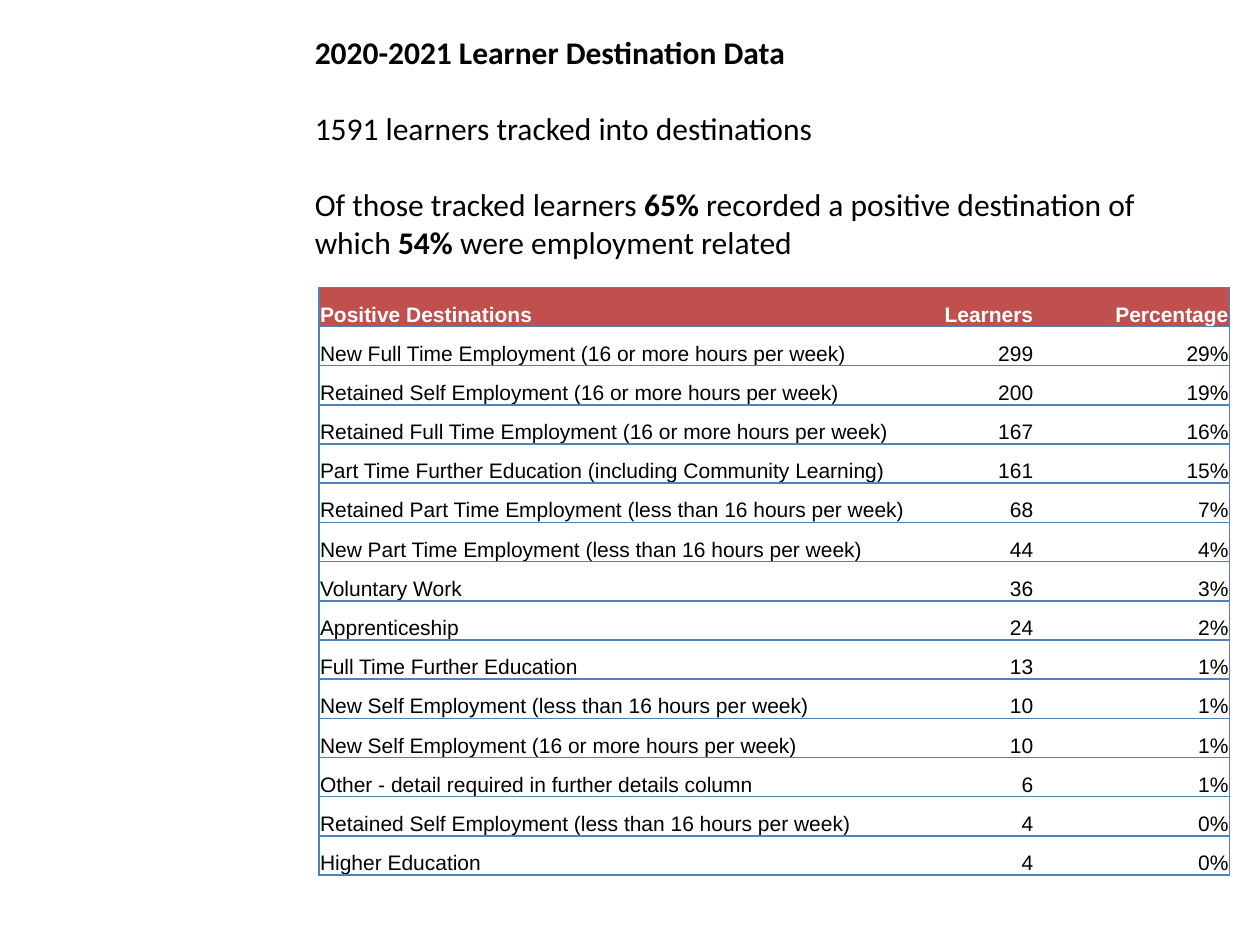
from lxml import etree
from pptx import Presentation
from pptx import util as u
from pptx.dml.color import RGBColor
from pptx.enum import text
from pptx.oxml import ns

BLACK = RGBColor(0x00, 0x00, 0x00)
WHITE = RGBColor(0xFF, 0xFF, 0xFF)
RED = RGBColor(0xC0, 0x50, 0x4D)
BLUE = RGBColor(0x4F, 0x81, 0xBD)

SLIDE_WIDTH, SLIDE_HEIGHT = u.Inches(10), u.Inches(7.5)
GRID_COLUMNS, GRID_ROWS = 1000, 750
SUMMARY_BOX = (240, 21, 736, 283)
TABLE_BOX = (253, 228, 723, 467)
TABLE_COLUMNS = (480, 88, 155)
PLAIN_STYLE = "{2D5ABB26-0587-4C30-8999-92F81FD0307C}"

SUMMARY_FONT = {"name": "Calibri", "size": u.Pt(18)}
TABLE_FONT = {"name": "Arial", "size": u.Pt(12)}
CELL_FORMAT = {
    "margin_left": u.Inches(0.01),
    "margin_right": u.Inches(0.01),
    "margin_top": u.Inches(0.01),
    "margin_bottom": 0,
    "vertical_anchor": text.MSO_ANCHOR.BOTTOM,
}

SUMMARY = [
    [("2020-2021 Learner Destination Data", True)],
    [("1591 learners tracked into destinations", False)],
    [
        ("Of those tracked learners ", False),
        ("65% ", True),
        ("recorded a positive destination of which ", False),
        ("54% ", True),
        ("were employment related", False),
    ],
]

DESTINATIONS = [
    ("Positive Destinations", "Learners", "Percentage"),
    ("New Full Time Employment (16 or more hours per week)", "299", "29%"),
    ("Retained Self Employment (16 or more hours per week)", "200", "19%"),
    ("Retained Full Time Employment (16 or more hours per week)", "167", "16%"),
    ("Part Time Further Education (including Community Learning)", "161", "15%"),
    ("Retained Part Time Employment (less than 16 hours per week)", "68", "7%"),
    ("New Part Time Employment (less than 16 hours per week)", "44", "4%"),
    ("Voluntary Work", "36", "3%"),
    ("Apprenticeship", "24", "2%"),
    ("Full Time Further Education", "13", "1%"),
    ("New Self Employment (less than 16 hours per week)", "10", "1%"),
    ("New Self Employment (16 or more hours per week)", "10", "1%"),
    ("Other - detail required in further details column", "6", "1%"),
    ("Retained Self Employment (less than 16 hours per week)", "4", "0%"),
    ("Higher Education", "4", "0%"),
]


def across(columns):
    return round(SLIDE_WIDTH * columns / GRID_COLUMNS)


def down(rows):
    return round(SLIDE_HEIGHT * rows / GRID_ROWS)


def place(box):
    left, top, width, height = box
    return across(left), down(top), across(width), down(height)


def apply(target, values):
    for name, value in values.items():
        setattr(target, name, value)


def add_run(paragraph, content, font, bold, color):
    run = paragraph.add_run()
    run.text = content
    apply(run.font, {**font, "bold": bold})
    run.font.color.rgb = color


def add_borders(cell, sides):
    properties = cell._tc.get_or_add_tcPr()
    for side in sides:
        line = etree.SubElement(properties, ns.qn(f"a:ln{side}"), w=str(u.Pt(1)))
        fill = etree.SubElement(line, ns.qn("a:solidFill"))
        etree.SubElement(fill, ns.qn("a:srgbClr"), val=str(BLUE))


def add_summary(slide, box):
    frame = slide.shapes.add_textbox(*place(box)).text_frame
    frame.word_wrap = True
    for index, runs in enumerate(SUMMARY):
        paragraph = frame.add_paragraph() if index else frame.paragraphs[0]
        if index:
            paragraph.space_before = u.Pt(22)
        for content, bold in runs:
            add_run(paragraph, content, SUMMARY_FONT, bold, BLACK)


def add_destinations(slide, box):
    row_count, column_count = len(DESTINATIONS), len(TABLE_COLUMNS)
    frame = slide.shapes.add_table(row_count, column_count, *place(box))
    table = frame.table
    apply(table, {"first_row": False, "horz_banding": False})
    table._tbl.tblPr.find(ns.qn("a:tableStyleId")).text = PLAIN_STYLE
    for column, width in zip(table.columns, TABLE_COLUMNS):
        column.width = across(width)
    for row in table.rows:
        row.height = down(box[3] / row_count)
    side_borders = ("LTB", "TB", "RTB")
    for row_index, values in enumerate(DESTINATIONS):
        header = row_index == 0
        for column_index, value in enumerate(values):
            cell = table.cell(row_index, column_index)
            apply(cell, CELL_FORMAT)
            add_borders(cell, side_borders[column_index])
            cell.fill.solid()
            cell.fill.fore_color.rgb = RED if header else WHITE
            paragraph = cell.text_frame.paragraphs[0]
            if column_index:
                paragraph.alignment = text.PP_ALIGN.RIGHT
            add_run(paragraph, value, TABLE_FONT, header, WHITE if header else BLACK)


def main():
    presentation = Presentation()
    apply(presentation, {"slide_width": SLIDE_WIDTH, "slide_height": SLIDE_HEIGHT})
    slide = presentation.slides.add_slide(presentation.slide_layouts[6])
    add_summary(slide, SUMMARY_BOX)
    add_destinations(slide, TABLE_BOX)
    presentation.save("out.pptx")


if __name__ == "__main__":
    main()
